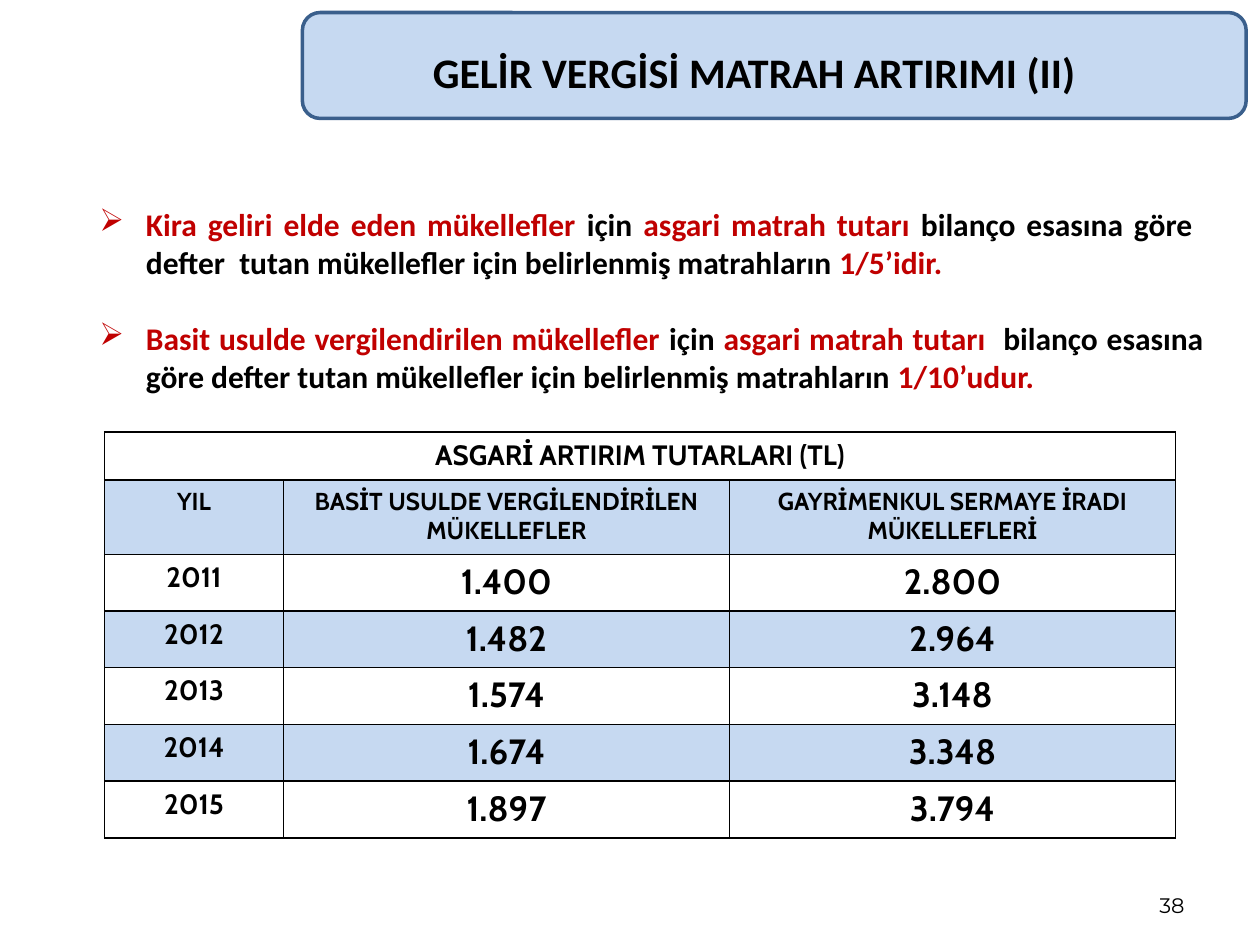
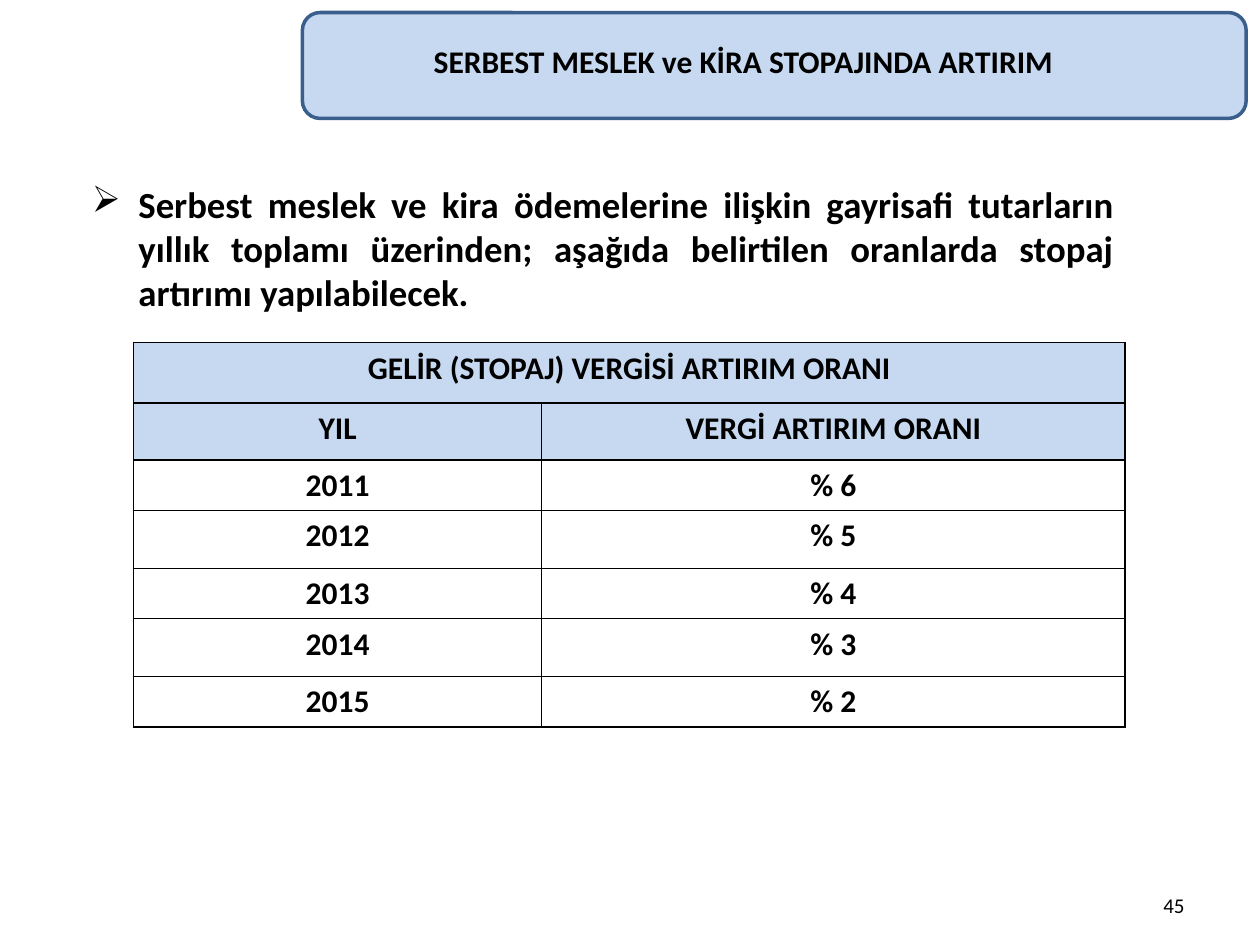
from pptx import Presentation
from pptx.dml.color import RGBColor
from pptx.enum.shapes import MSO_SHAPE as Shape
from pptx.enum.text import MSO_ANCHOR as Anchor, PP_ALIGN as Align
from pptx.oxml.ns import qn
from pptx.util import Inches, Pt
from lxml.etree import SubElement

BLACK = RGBColor(0x00, 0x00, 0x00)
WHITE = RGBColor(0xFF, 0xFF, 0xFF)
RED = RGBColor(0xC0, 0x00, 0x00)
PALE_BLUE = RGBColor(0xC6, 0xD9, 0xF1)
DARK_BLUE = RGBColor(0x3A, 0x5F, 0x8C)

BAND_BOX = (2.4, 0.1, 7.49, 0.84)
NUMBER_BOX = (7.17, 6.83, 2.33, 0.5)
HANGING = 0.37
YEARS = ("2011", "2012", "2013", "2014", "2015")


def set_font(para, size, name="Calibri", bold=True, color=BLACK):
    font = para.font
    font.size, font.name, font.bold = Pt(size), name, bold
    font.color.rgb = color


def add_text_frame(page, box, anchor):
    frame = page.shapes.add_textbox(*map(Inches, box)).text_frame
    frame.word_wrap = True
    frame.vertical_anchor = anchor
    return frame


def add_line(page, box, text, align, anchor, size, **font):
    para = add_text_frame(page, box, anchor).paragraphs[0]
    para.text, para.alignment = text, align
    set_font(para, size, **font)


def add_frame(page, title, title_box, title_size, number, number_font):
    """Draw the title band, the title and the page number."""
    band = page.shapes.add_shape(Shape.ROUNDED_RECTANGLE, *map(Inches, BAND_BOX))
    band.shadow.inherit = False
    band.fill.solid()
    band.fill.fore_color.rgb = PALE_BLUE
    band.line.color.rgb = DARK_BLUE
    band.line.width = Pt(2)
    add_line(page, title_box, title, Align.CENTER, Anchor.MIDDLE, title_size)
    add_line(page, NUMBER_BOX, number, Align.RIGHT, Anchor.BOTTOM, 12,
             name=number_font, bold=False)


def add_arrow_bullet(para, margin, color):
    props = para._p.get_or_add_pPr()
    props.set("marL", str(Inches(margin)))
    props.set("indent", str(Inches(-HANGING)))
    SubElement(SubElement(props, qn("a:buClr")), qn("a:srgbClr"), val=str(color))
    SubElement(props, qn("a:buChar"), char="➢")


def add_bullets(page, box, bullets, margin, size, gap=0):
    """Each bullet is a list of (text, colour) spans; the first colours its arrow."""
    frame = add_text_frame(page, box, Anchor.MIDDLE)
    for index, spans in enumerate(bullets):
        para = frame.add_paragraph() if index else frame.paragraphs[0]
        para.alignment = Align.JUSTIFY
        if index:
            para.space_before = Pt(gap)
        add_arrow_bullet(para, margin, spans[0][1])
        set_font(para, size)
        for text, color in spans:
            span = para.add_run()
            span.text = text
            span.font.color.rgb = color


def add_borders(cell):
    props = cell._tc.get_or_add_tcPr()
    for side in ("lnL", "lnR", "lnT", "lnB"):
        line = SubElement(props, qn(f"a:{side}"), w=str(Pt(0.96)))
        fill = SubElement(line, qn("a:solidFill"))
        SubElement(fill, qn("a:srgbClr"), val=str(BLACK))


def add_grid(page, left_top, widths, heights, rows, shaded, size_at, font_name):
    """Draw a table whose first row is one merged heading."""
    box = (*left_top, sum(widths), sum(heights))
    table = page.shapes.add_table(len(heights), len(widths), *map(Inches, box)).table
    table.first_row = table.horz_banding = False
    for column, width in zip(table.columns, widths):
        column.width = Inches(width)
    for row, height in zip(table.rows, heights):
        row.height = Inches(height)
    table.cell(0, 0).merge(table.cell(0, len(widths) - 1))
    for r in range(len(heights)):
        for c in range(len(widths)):
            cell = table.cell(r, c)
            add_borders(cell)
            cell.fill.solid()
            cell.fill.fore_color.rgb = PALE_BLUE if r in shaded else WHITE
            if cell.is_spanned:
                continue
            para = cell.text_frame.paragraphs[0]
            para.text, para.alignment = rows[r][c], Align.CENTER
            set_font(para, size_at(r, c), font_name)


def minimum_amount_size(row, column):
    if row == 1:
        return 14
    return 20 if row > 1 and column > 0 else 16


def build_income_tax(page):
    add_frame(page, "GELİR VERGİSİ MATRAH ARTIRIMI (II)",
              (2.64, 0.21, 6.69, 0.71), 24, "38", "Montserrat")
    simple = ("1.400", "1.482", "1.574", "1.674", "1.897")
    rental = ("2.800", "2.964", "3.148", "3.348", "3.794")
    rows = [("ASGARİ ARTIRIM TUTARLARI (TL)",),
            ("YIL", "BASİT USULDE VERGİLENDİRİLEN MÜKELLEFLER",
             "GAYRİMENKUL SERMAYE İRADI MÜKELLEFLERİ"),
            *zip(YEARS, simple, rental)]
    add_grid(page, (0.83, 3.43), (1.42, 3.54, 3.54), [0.38, 0.59] + [0.45] * 5,
             rows, (1, 3, 5), minimum_amount_size, "Cabin")
    add_bullets(page, (0.2, 1.58, 9.45, 1.6), [
        [("Kira geliri elde eden mükellefler ", RED), ("için ", BLACK),
         ("asgari matrah tutarı ", RED),
         ("bilanço esasına göre  defter  tutan mükellefler için "
          "belirlenmiş matrahların ", BLACK),
         ("1/5’idir. ", RED)],
        [("Basit usulde vergilendirilen mükellefler ", RED), ("için ", BLACK),
         ("asgari matrah tutarı  ", RED),
         ("bilanço esasına göre defter tutan mükellefler için "
          "belirlenmiş matrahların ", BLACK),
         ("1/10’udur.", RED)],
    ], margin=0.86, size=18, gap=22)


def build_withholding(page):
    add_frame(page, "SERBEST MESLEK ve KİRA STOPAJINDA ARTIRIM",
              (2.24, 0.21, 7.32, 0.55), 18, "45", "Calibri")
    rates = [f"% {rate}" for rate in range(6, 1, -1)]
    rows = [("GELİR (STOPAJ) VERGİSİ ARTIRIM ORANI",),
            ("YIL", "VERGİ ARTIRIM ORANI"),
            *zip(YEARS, rates)]
    add_grid(page, (1.06, 2.72), (3.24, 4.63),
             (0.48, 0.45, 0.4, 0.46, 0.4, 0.46, 0.4),
             rows, (0, 1), lambda row, column: 18, "Calibri")
    add_bullets(page, (0.12, 1.39, 8.82, 1.15), [
        [("Serbest meslek ve kira ödemelerine ilişkin gayrisafi tutarların "
          "yıllık toplamı üzerinden; aşağıda belirtilen oranlarda stopaj "
          "artırımı yapılabilecek.", BLACK)],
    ], margin=0.88, size=21)


def main():
    deck = Presentation()
    deck.slide_width, deck.slide_height = Inches(10), Inches(7.5)
    for build in (build_income_tax, build_withholding):
        build(deck.slides.add_slide(deck.slide_layouts[6]))
    deck.save("out.pptx")


if __name__ == "__main__":
    main()
